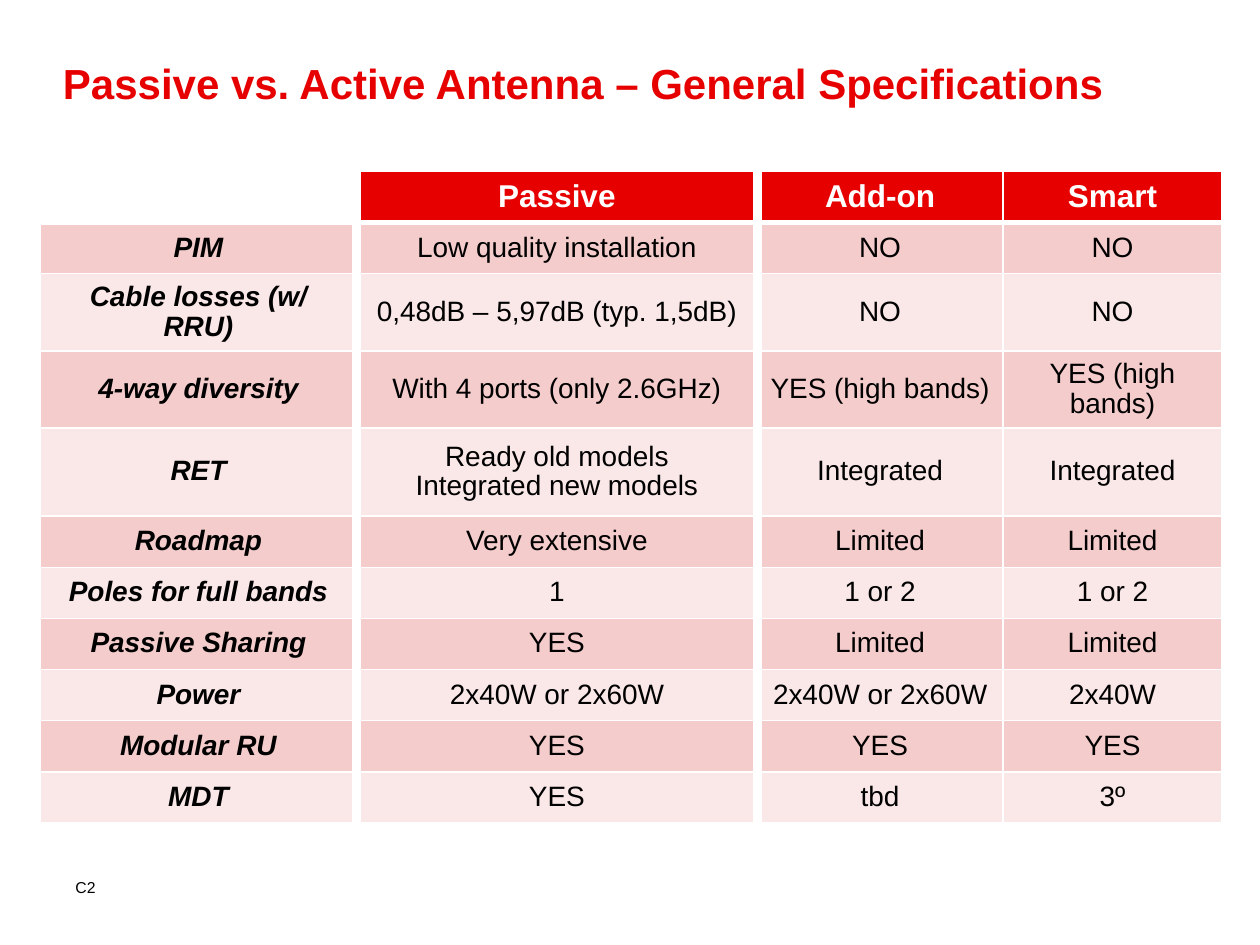
from dataclasses import dataclass
from lxml.etree import SubElement
from pptx import Presentation
from pptx.dml.color import RGBColor as Rgb
from pptx.enum.text import MSO_ANCHOR as Anchor, PP_ALIGN as Align
from pptx.oxml.ns import qn
from pptx.util import Inches, Pt

TITLE = "Passive vs. Active Antenna – General Specifications"
FOOTER = "C2"
HEADERS = ["", "Passive", "Add-on", "Smart"]
SPECIFICATIONS = [
    ("PIM", "Low quality installation", "NO", "NO"),
    ("Cable losses (w/ RRU)", "0,48dB – 5,97dB (typ. 1,5dB)", "NO", "NO"),
    ("4-way diversity", "With 4 ports (only 2.6GHz)", "YES (high bands)", "YES (high bands)"),
    ("RET", "Ready old models\nIntegrated new models", "Integrated", "Integrated"),
    ("Roadmap", "Very extensive", "Limited", "Limited"),
    ("Poles for full bands", "1", "1 or 2", "1 or 2"),
    ("Passive Sharing", "YES", "Limited", "Limited"),
    ("Power", "2x40W or 2x60W", "2x40W or 2x60W", "2x40W"),
    ("Modular RU", "YES", "YES", "YES"),
    ("MDT", "YES", "tbd", "3º"),
]
COLUMN_WIDTHS = [2.51, 3.18, 1.95, 1.74]
TABLE_LEFT, TABLE_TOP, TABLE_HEIGHT = 0.32, 1.36, 4.76
TALL_ROW, TALL_HEIGHT = 4, 0.7
COLUMN_RULES = [1, 6, 6, 1, 1]
HEADER_RULE, ROW_RULE = 3, 1


@dataclass(frozen=True)
class Theme:
    font: str = "Arial"
    red: str = "E60000"
    white: str = "FFFFFF"
    black: str = "000000"
    bands: tuple = ("F5CCCC", "FAE7E7")
    title_size: int = 24
    header_size: int = 18
    body_size: int = 16
    footer_size: int = 9
    cell_spacing: float = 0.96


THEME = Theme()


def write(frame, text, *, size, color, bold=False, italic=False, align=Align.LEFT, spacing=None):
    for index, line in enumerate(text.split("\n")):
        para = frame.add_paragraph() if index else frame.paragraphs[0]
        para.alignment = align
        para.line_spacing = spacing
        span = para.add_run()
        span.text = line
        font = span.font
        font.name, font.size = THEME.font, Pt(size)
        font.bold, font.italic = bold, italic
        font.color.rgb = Rgb.from_string(color)


def add_text(page, text, bounds, inset=None, **style):
    box = page.shapes.add_textbox(*map(Inches, bounds))
    frame = box.text_frame
    frame.word_wrap = True
    if inset is not None:
        frame.margin_left = frame.margin_right = Inches(inset)
        frame.margin_top = frame.margin_bottom = Inches(inset)
    write(frame, text, **style)


def set_borders(cell, widths):
    properties = cell._tc.get_or_add_tcPr()
    for side, width in zip("LRTB", widths):
        line = SubElement(properties, qn(f"a:ln{side}"), w=str(Pt(width)))
        fill = SubElement(line, qn("a:solidFill"))
        SubElement(fill, qn("a:srgbClr"), val=THEME.white)


def add_specifications(page):
    rows = [HEADERS, *SPECIFICATIONS]
    bounds = (TABLE_LEFT, TABLE_TOP, sum(COLUMN_WIDTHS), TABLE_HEIGHT)
    table = page.shapes.add_table(len(rows), len(HEADERS), *map(Inches, bounds)).table
    for column, width in zip(table.columns, COLUMN_WIDTHS):
        column.width = Inches(width)
    row_height = (TABLE_HEIGHT - TALL_HEIGHT) / (len(rows) - 1)
    row_rules = [ROW_RULE, HEADER_RULE] + [ROW_RULE] * len(SPECIFICATIONS)

    for r, values in enumerate(rows):
        table.rows[r].height = Inches(TALL_HEIGHT if r == TALL_ROW else row_height)
        header = r == 0
        for c, text in enumerate(values):
            cell = table.cell(r, c)
            set_borders(cell, COLUMN_RULES[c:c + 2] + row_rules[r:r + 2])
            if header:
                fill = THEME.red if text else THEME.white
            else:
                fill = THEME.bands[(r - 1) % 2]
            cell.fill.solid()
            cell.fill.fore_color.rgb = Rgb.from_string(fill)
            cell.vertical_anchor = Anchor.MIDDLE
            if text:
                write(
                    cell.text_frame, text,
                    size=THEME.header_size if header else THEME.body_size,
                    color=THEME.white if header else THEME.black,
                    bold=header or c == 0, italic=not header and c == 0,
                    align=Align.CENTER, spacing=THEME.cell_spacing,
                )


def main():
    deck = Presentation()
    deck.slide_width, deck.slide_height = Inches(10), Inches(7.5)
    page = deck.slides.add_slide(deck.slide_layouts[6])
    add_text(page, TITLE, (0.5, 0.46, 8.54, 1.12), inset=0,
             size=THEME.title_size, color=THEME.red, bold=True)
    add_specifications(page)
    add_text(page, FOOTER, (0.5, 6.92, 2.99, 0.39),
             size=THEME.footer_size, color=THEME.black)
    deck.save("out.pptx")


if __name__ == "__main__":
    main()
